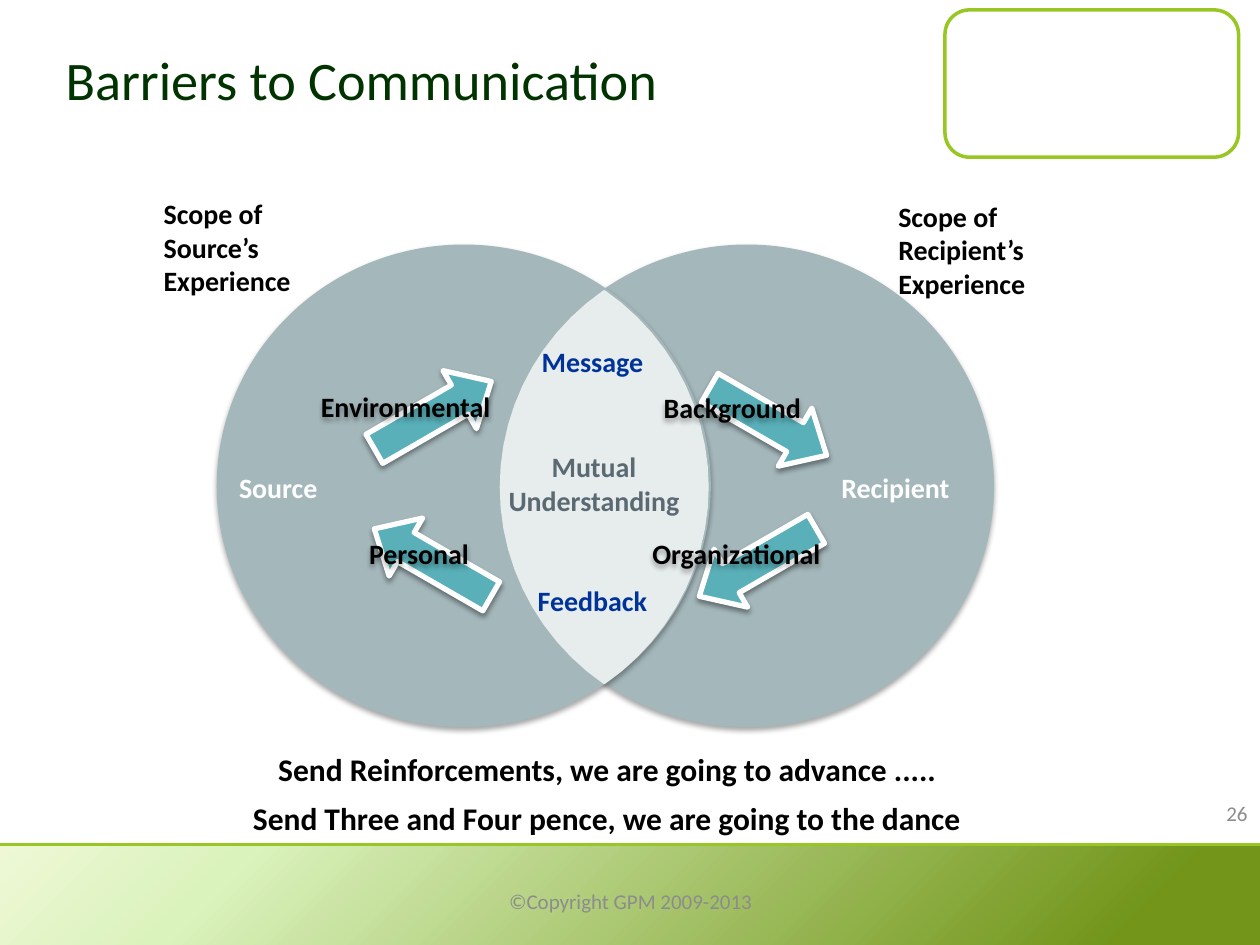
from math import cos, radians, sin

from lxml.etree import SubElement
from pptx import Presentation
from pptx.dml.color import RGBColor
from pptx.enum.shapes import MSO_CONNECTOR, MSO_SHAPE as Shape
from pptx.enum.text import MSO_ANCHOR as Anchor, PP_ALIGN as Align
from pptx.oxml.ns import qn
from pptx.util import Cm, Pt

COLOURS = {
    "title": "003300", "text": "000000", "white": "FFFFFF", "lime": "98C723",
    "circle": "A4B7BB", "overlap": "E7ECED", "arrow": "59B0B9",
    "exchange": "003399", "mutual": "5B6973", "footer": "8C8C8C",
}
BAND_STOPS = [(0, "EEF8D5"), (19, "DAF2BC"), (89, "72951A")]
FONT = "Calibri"


def colour(name):
    """Return the named colour."""
    return RGBColor.from_string(COLOURS[name])


def paint(shape, fill, line=None, width=1):
    """Give a shape its fill and outline, and no shadow."""
    shape.shadow.inherit = False
    shape.fill.solid()
    shape.fill.fore_color.rgb = colour(fill)
    if line:
        shape.line.color.rgb = colour(line)
        shape.line.width = Pt(width)
    else:
        shape.line.fill.background()


def cast_shadow(shape, opacity=35):
    """Add a soft shadow straight below a shape."""
    shape.shadow.inherit = False
    effects = shape._element.spPr.find(qn("a:effectLst"))
    outer = SubElement(effects, qn("a:outerShdw"), blurRad=str(Pt(3.1)),
                       dist=str(Pt(1.8)), dir="5400000", rotWithShape="0")
    black = SubElement(outer, qn("a:srgbClr"), val=COLOURS["text"])
    SubElement(black, qn("a:alpha"), val=str(opacity * 1000))


def format_text(frame, size, ink, bold=False, align=Align.LEFT):
    """Format the only paragraph of a text frame."""
    paragraph = frame.paragraphs[0]
    paragraph.alignment = align
    for run in paragraph.runs:
        run.font.name = FONT
        run.font.size = Pt(size)
        run.font.bold = bold
        run.font.color.rgb = colour(ink)


def add_label(slide, words, left, top, width, height=0.94, ink="text", size=16,
              bold=True, align=Align.LEFT, wrap=False, anchor=Anchor.TOP):
    """Add a text box measured in centimetres."""
    label = slide.shapes.add_textbox(Cm(left), Cm(top), Cm(width), Cm(height))
    frame = label.text_frame
    frame.word_wrap = wrap
    frame.vertical_anchor = anchor
    frame.paragraphs[0].text = words
    format_text(frame, size, ink, bold, align)
    return label


def add_frame(slide):
    """Add the corner panel, the footer band and its rule."""
    panel = slide.shapes.add_shape(Shape.ROUNDED_RECTANGLE, Cm(19.05), Cm(0.2), Cm(5.92), Cm(2.97))
    paint(panel, "white", "lime", 2)

    band = slide.shapes.add_shape(Shape.RECTANGLE, 0, Cm(17.04), Cm(25.4), Cm(2.08))
    paint(band, "white")
    band.fill.gradient()
    gradient = band._element.spPr.find(qn("a:gradFill"))
    stops = gradient.find(qn("a:gsLst"))
    for stop in list(stops):
        stops.remove(stop)
    for position, shade in BAND_STOPS:
        stop = SubElement(stops, qn("a:gs"), pos=str(position * 1000))
        SubElement(stop, qn("a:srgbClr"), val=shade)
    direction = gradient.find(qn("a:lin"))
    direction.set("ang", "2700000")
    direction.set("scaled", "0")

    rule = slide.shapes.add_connector(MSO_CONNECTOR.STRAIGHT, 0, Cm(17.02), Cm(25.4), Cm(17.02))
    rule.line.color.rgb = colour("lime")
    rule.line.width = Pt(1.5)
    SubElement(rule._element.spPr, qn("a:effectLst"))


def add_title(slide):
    """Place and format the slide title."""
    title = slide.shapes.title
    title.left, title.top, title.width, title.height = Cm(1.07), 0, Cm(17.15), Cm(3.18)
    title.text_frame.text = "Barriers to Communication"
    title.text_frame.vertical_anchor = Anchor.MIDDLE
    format_text(title.text_frame, 31, "title")


def add_circle(slide, left):
    """Add one circle of experience."""
    circle = slide.shapes.add_shape(Shape.OVAL, Cm(left), Cm(4.93), Cm(9.96), Cm(9.73))
    paint(circle, "circle")
    cast_shadow(circle)


def add_overlap_half(slide, side):
    """Add half of the overlap, bulging right (1) or left (-1)."""
    seam, centre_y, radius_x, radius_y, reach = 12.18, 9.82, 4.9, 4.83, 55
    points = [
        (Cm(seam + side * radius_x * (cos(radians(angle)) - cos(radians(reach)))),
         Cm(centre_y + radius_y * sin(radians(angle))))
        for angle in range(-reach, reach + 1, 5)
    ]
    builder = slide.shapes.build_freeform(*points[0])
    builder.add_line_segments(points[1:], close=False)
    paint(builder.convert_to_shape(), "overlap", "overlap")


def add_arrow(slide, left, top, rotation):
    """Add one barrier arrow."""
    arrow = slide.shapes.add_shape(Shape.UP_ARROW, Cm(left), Cm(top), Cm(1.35), Cm(2.72))
    arrow.adjustments[0], arrow.adjustments[1] = 0.5, 0.544
    arrow.rotation = rotation
    paint(arrow, "arrow", "white", 3)
    cast_shadow(arrow, 38)


def main():
    """Build the slide and save it."""
    deck = Presentation()
    deck.slide_width, deck.slide_height = Cm(25.4), Cm(19.05)
    slide = deck.slides.add_slide(deck.slide_layouts[5])

    add_frame(slide)
    add_title(slide)
    for left in (10.08, 4.37):
        add_circle(slide, left)
    for words, left, top in (("Scope of Source’s Experience", 3.05, 3.84),
                             ("Scope of Recipient’s Experience", 17.86, 3.89)):
        add_label(slide, words, left, top, 4.4, 2.29, wrap=True)
    for side in (1, -1):
        add_overlap_half(slide, side)

    add_label(slide, "Mutual\nUnderstanding", 9.98, 8.94, 3.99, 1.63, "mutual", align=Align.CENTER)
    for words, left, top, width, ink in (("Message", 10.67, 6.83, 2.57, "exchange"),
                                         ("Feedback", 10.59, 11.63, 2.74, "exchange"),
                                         ("Source", 4.57, 9.37, 2.11, "white"),
                                         ("Recipient", 16.71, 9.37, 2.72, "white")):
        add_label(slide, words, left, top, width, ink=ink)

    for left, top, rotation in ((8.05, 9.98, 300), (14.6, 9.98, 240),
                                (8.05, 7.01, 60), (14.81, 7.14, 120)):
        add_arrow(slide, left, top, rotation)
    for barrier, left, top, width in (("Background", 13.13, 7.75, 3.33),
                                      ("Environmental", 6.22, 7.72, 3.96),
                                      ("Organizational", 12.9, 10.69, 3.94),
                                      ("Personal", 7.19, 10.69, 2.54)):
        cast_shadow(add_label(slide, barrier, left, top, width))

    add_label(slide, "Send Reinforcements, we are going to advance .....",
              5.36, 14.99, 13.87, 1.02, size=18)
    add_label(slide, "Send Three and Four pence, we are going to the dance",
              4.85, 15.98, 14.88, 1.02, size=18)
    for words, left, top, width, align in (
            ("©Copyright GPM 2009-2013", 8.69, 17.65, 8.05, Align.CENTER),
            ("26", 19.48, 15.88, 5.92, Align.RIGHT)):
        add_label(slide, words, left, top, width, 1.02, "footer", 12, False,
                  align, True, Anchor.MIDDLE)

    deck.save("out.pptx")


if __name__ == "__main__":
    main()
